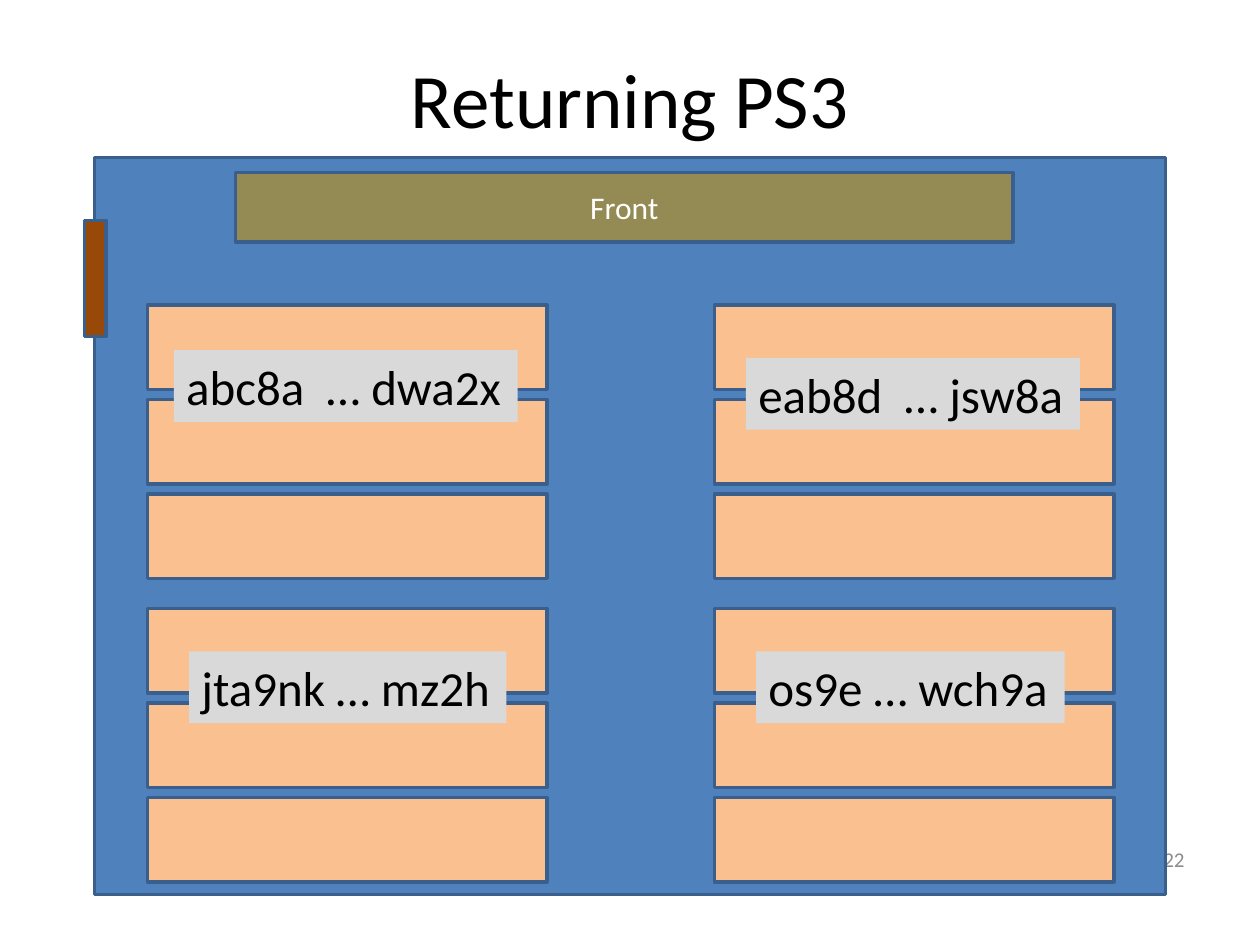
from dataclasses import dataclass

import pptx
import pptx.dml.color
import pptx.enum.shapes
import pptx.enum.text
import pptx.util

Inches = pptx.util.Inches
Align = pptx.enum.text.PP_ALIGN
Anchor = pptx.enum.text.MSO_ANCHOR


@dataclass(frozen=True)
class Theme:
    font: str = "Calibri"
    room: str = "4F81BD"
    outline: str = "3A5F8C"
    front: str = "948A54"
    door: str = "984807"
    desk: str = "FAC090"
    label: str = "D9D9D9"
    dark: str = "000000"
    light: str = "FFFFFF"
    muted: str = "8C8C8C"
    title_size: int = 44
    label_size: int = 28
    front_size: int = 18
    number_size: int = 12
    line_width: int = 2


THEME = Theme()


def rgb(value):
    return pptx.dml.color.RGBColor.from_string(value)


def write(shape, text, size, color, align, anchor=Anchor.MIDDLE):
    frame = shape.text_frame
    frame.vertical_anchor = anchor
    paragraph = frame.paragraphs[0]
    paragraph.alignment = align
    run = paragraph.add_run()
    run.text = text
    run.font.name = THEME.font
    run.font.size = pptx.util.Pt(size)
    run.font.color.rgb = rgb(color)


def add_block(slide, box, fill):
    shape = slide.shapes.add_shape(
        pptx.enum.shapes.MSO_SHAPE.RECTANGLE, *map(Inches, box))
    shape.shadow.inherit = False
    shape.fill.solid()
    shape.fill.fore_color.rgb = rgb(fill)
    shape.line.color.rgb = rgb(THEME.outline)
    shape.line.width = pptx.util.Pt(THEME.line_width)
    return shape


def add_title(slide, box, text):
    title = slide.shapes.title
    title.left, title.top, title.width, title.height = map(Inches, box)
    write(title, text, THEME.title_size, THEME.dark, Align.CENTER)


def add_slide_number(slide, box, text):
    number = slide.shapes.add_textbox(*map(Inches, box))
    number.text_frame.word_wrap = True
    write(number, text, THEME.number_size, THEME.muted, Align.RIGHT)


def add_room(slide, box):
    left, top, width, height = box
    add_block(slide, box, THEME.room)
    front = add_block(slide, (left + 1.12, top + 0.12, 6.17, 0.55), THEME.front)
    write(front, "Front", THEME.front_size, THEME.light, Align.CENTER)
    add_block(slide, (left - 0.08, top + 0.5, 0.17, 0.92), THEME.door)


def add_desks(slide, box, rows=3, gap=0.08):
    left, top, width, height = box
    desk_height = (height - gap * (rows - 1)) / rows
    for row in range(rows):
        desk_top = top + row * (desk_height + gap)
        add_block(slide, (left, desk_top, width, desk_height), THEME.desk)


def add_label(slide, box, text):
    label = slide.shapes.add_textbox(*map(Inches, box))
    label.fill.solid()
    label.fill.fore_color.rgb = rgb(THEME.label)
    label.text_frame.word_wrap = False
    label.text_frame.auto_size = pptx.enum.text.MSO_AUTO_SIZE.SHAPE_TO_FIT_TEXT
    write(label, text, THEME.label_size, THEME.dark, Align.LEFT, Anchor.TOP)


def main():
    presentation = pptx.Presentation()
    presentation.slide_width = Inches(10)
    presentation.slide_height = Inches(7.5)
    slide = presentation.slides.add_slide(presentation.slide_layouts[5])

    add_title(slide, (0.5, 0.3, 9, 0.95), "Returning PS3")
    add_slide_number(slide, (7.17, 6.62, 2.33, 0.4), "22")

    room_left, room_top = 0.75, 1.25
    add_room(slide, (room_left, room_top, 8.5, 5.85))

    sections = [
        (0, 0, "abc8a  … dwa2x", 0.21, 0.36, 2.73),
        (1, 0, "eab8d  … jsw8a", 0.25, 0.42, 2.65),
        (0, 1, "jta9nk … mz2h", 0.33, 0.34, 2.52),
        (1, 1, "os9e … wch9a", 0.33, 0.34, 2.45),
    ]
    for column, row, names, inset, drop, width in sections:
        left = room_left + 0.42 + column * 4.5
        top = room_top + 1.17 + row * 2.41
        add_desks(slide, (left, top, 3.17, 2.17))
        add_label(slide, (left + inset, top + drop, width, 0.57), names)

    presentation.save("out.pptx")


if __name__ == "__main__":
    main()
